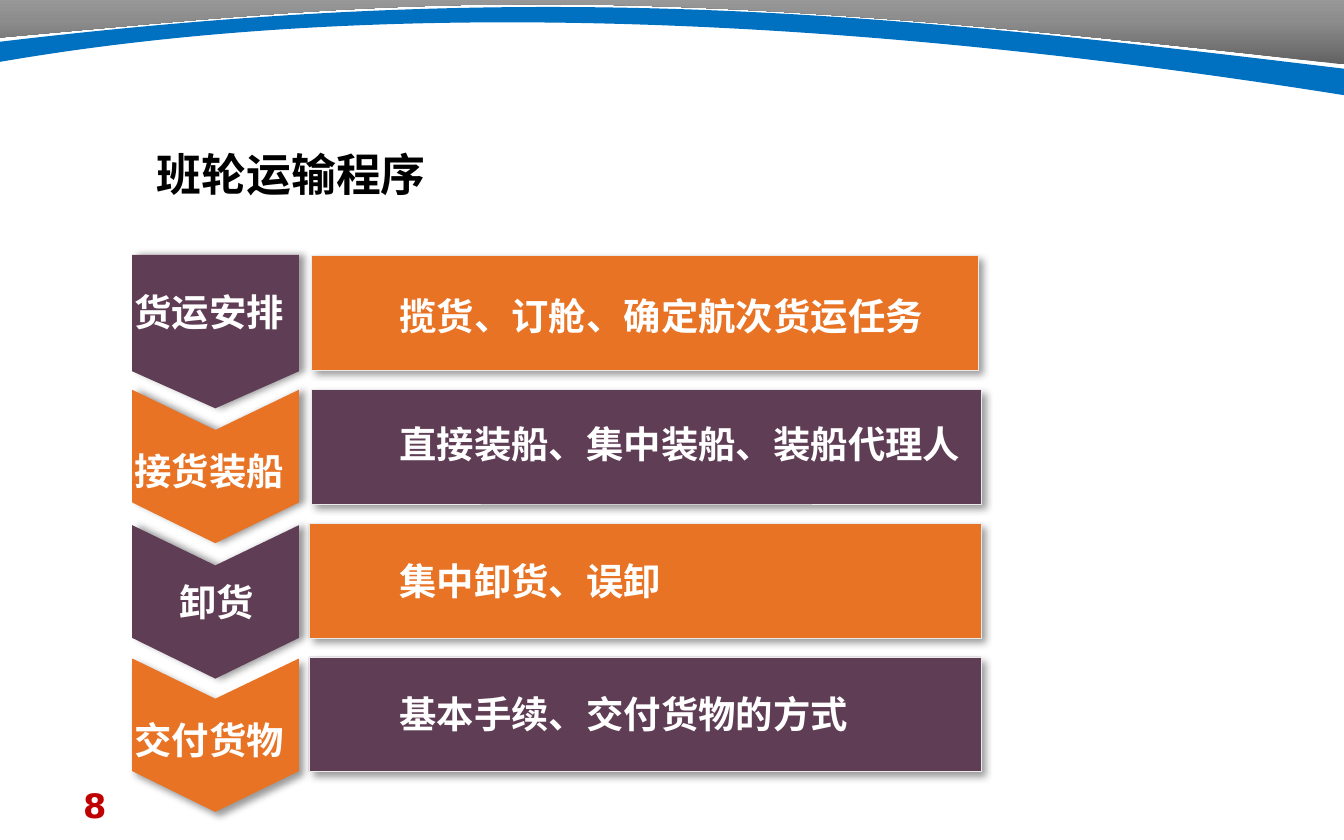
from copy import deepcopy

from lxml import etree
from pptx import Presentation
from pptx.dml.color import RGBColor
from pptx.enum.shapes import MSO_SHAPE
from pptx.enum.text import MSO_ANCHOR, MSO_AUTO_SIZE, PP_ALIGN
from pptx.oxml import parse_xml
from pptx.oxml.ns import qn
from pptx.util import Cm, Pt

RECTANGLE = MSO_SHAPE.RECTANGLE
MIDDLE = MSO_ANCHOR.MIDDLE
NO_FIT = MSO_AUTO_SIZE.NONE
LEFT, CENTER = PP_ALIGN.LEFT, PP_ALIGN.CENTER
NAMESPACE = "http://schemas.openxmlformats.org/drawingml/2006/main"
CHINESE = "Noto Sans CJK SC"
ORANGE, PURPLE, WHITE = "E87324", "5F3D55", "FFFFFF"
colour = RGBColor.from_string


def write(box, text, size, text_colour, font=CHINESE, align=LEFT, wrap=True):
    frame = box.text_frame
    frame.auto_size = NO_FIT
    frame.word_wrap = wrap
    frame.vertical_anchor = MIDDLE
    para = frame.paragraphs[0]
    para.alignment = align
    span = para.add_run()
    span.text = text
    span.font.size = Pt(size)
    span.font.bold = True
    span.font.color.rgb = colour(text_colour)
    span.font.name = font
    etree.SubElement(span._r.get_or_add_rPr(), qn("a:ea"), typeface=font)


def cast_shadow(shape, degrees, shade="000000", opacity=40, blur=4, distance=3):
    shape._element.spPr.append(parse_xml(
        f'<a:effectLst xmlns:a="{NAMESPACE}"><a:outerShdw blurRad="{Pt(blur)}" '
        f'dist="{Pt(distance)}" dir="{degrees * 60000}" algn="tl" rotWithShape="0">'
        f'<a:srgbClr val="{shade}"><a:alpha val="{opacity * 1000}"/></a:srgbClr>'
        '</a:outerShdw></a:effectLst>'))


deck = Presentation()
deck.slide_width, deck.slide_height = Cm(25.4), Cm(15.88)
page = deck.slides.add_slide(deck.slide_layouts[5])
shapes = page.shapes

gray_points = [(25.4, 1.22), (11.25, -0.43), (7.82, 0), (0, 0.71),
               (0, 0.48), (0, -0.05), (25.4, -0.05)]
blue_points = [(0, 0.79), (10.24, -0.43), (16.56, 0.23), (25.4, 1.3),
               (25.4, 1.8), (15.34, 0.2), (6.78, 0), (0, 1.17)]
bands = []
for points, curve_starts in ((gray_points, [0]), (blue_points, [0, 4])):
    corners = [(Cm(x), Cm(y)) for x, y in points]
    builder = shapes.build_freeform(*corners[0])
    builder.add_line_segments(corners[1:], close=True)
    band = builder.convert_to_shape()
    lines = list(band._element.iter(qn("a:lnTo")))
    for start in curve_starts:
        curve = etree.Element(qn("a:cubicBezTo"))
        lines[start].addprevious(curve)
        for line in lines[start:start + 3]:
            curve.append(line[0])
            line.getparent().remove(line)
    band.shadow.inherit = False
    band.line.fill.background()
    bands.append(band)

gray_band, blue_band = bands
blue_band.fill.solid()
blue_band.fill.fore_color.rgb = colour("0070C0")
gray_band.fill.gradient()
gray_band.fill.gradient_angle = 90
stop_list = gray_band._element.spPr.find(qn("a:gradFill")).find(qn("a:gsLst"))
stop_list.insert(1, deepcopy(stop_list[0]))
for stop, position, shade in zip(gray_band.fill.gradient_stops, (0, 0.5, 1),
                                 ("626262", "8C8C8C", "A6A6A6")):
    stop.position = position
    stop.color.rgb = colour(shade)
gray_band.shadow.inherit = True
cast_shadow(gray_band, 90, WHITE, 100, 0, 2)

title = shapes.title
title.left, title.top, title.width, title.height = Cm(2.71), Cm(2.65), Cm(6.4), Cm(1.27)
write(title, "班轮运输程序", 24, "000000")

number_box = shapes.add_textbox(Cm(1.32), Cm(14.8), Cm(5.92), Cm(0.84))
write(number_box, "8", 18, "C00000", "DejaVu Sans")

steps = [
    ("货运安排", 5.33, LEFT, 4.82, 0, "揽货、订舱、确定航次货运任务", 5.41, 5.89, 18.49),
    ("接货装船", 8.33, LEFT, 7.37, 0, "直接装船、集中装船、装船代理人", 7.82, 5.89, 18.54),
    ("卸货", 10.82, CENTER, 9.93, 0, "集中卸货、误卸", 10.41, 5.84, 18.54),
    ("交付货物", 13.42, LEFT, 12.45, 45, "基本手续、交付货物的方式", 12.93, 5.84, 18.54),
]
for index, step in enumerate(steps):
    label, label_top, align, arrow_top, shadow_angle = step[:5]
    detail, detail_top, bar_left, bar_right = step[5:]
    bar_top = 4.83 + 2.53 * index
    arrow_colour, bar_colour = (ORANGE, PURPLE) if index % 2 else (PURPLE, ORANGE)

    bar = shapes.add_shape(RECTANGLE, Cm(bar_left), Cm(bar_top),
                           Cm(bar_right - bar_left), Cm(2.17))
    bar.fill.solid()
    bar.fill.fore_color.rgb = colour(bar_colour)
    bar.line.color.rgb = colour("EAEAEA")
    bar.line.width = Pt(0.25)
    cast_shadow(bar, 45)

    notch = [(4.07, 0.76)] if index else []
    shoulder = 2.13 if index else 2.2
    outline = [(2.5, 0), *notch, (5.65, 0), (5.65, shoulder), (4.07, 2.9), (2.5, shoulder)]
    corners = [(Cm(x), Cm(arrow_top + y)) for x, y in outline]
    builder = shapes.build_freeform(*corners[0])
    builder.add_line_segments(corners[1:], close=True)
    arrow = builder.convert_to_shape()
    arrow.fill.solid()
    arrow.fill.fore_color.rgb = colour(arrow_colour)
    arrow.line.fill.background()
    cast_shadow(arrow, shadow_angle)

    label_box = shapes.add_textbox(Cm(2.29), Cm(label_top), Cm(3.61), Cm(1.12))
    write(label_box, label, 20, WHITE, align=align)
    detail_box = shapes.add_textbox(Cm(7.3), Cm(detail_top),
                                    Cm(0.71 * len(detail) + 0.6), Cm(1.12))
    write(detail_box, detail, 20, WHITE, wrap=False)

deck.save("out.pptx")
